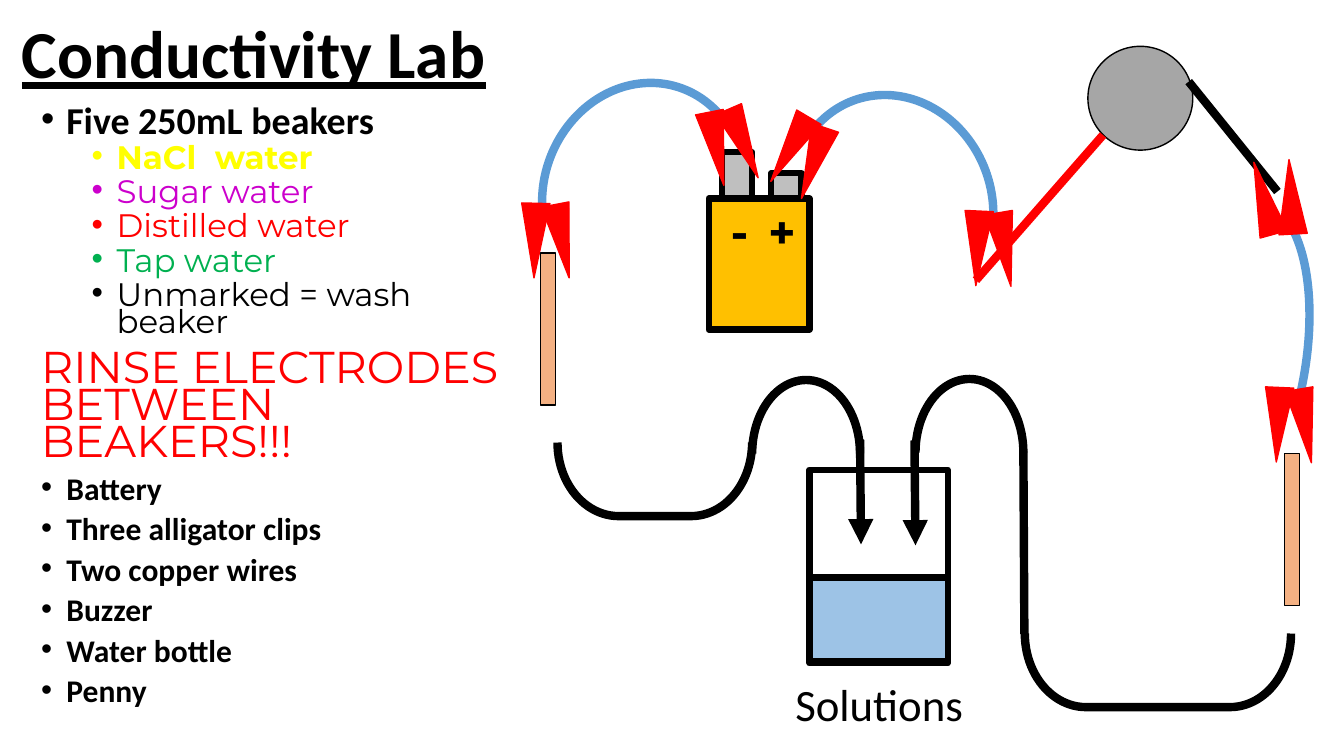
from dataclasses import dataclass
from math import cos, radians, sin

from lxml.etree import SubElement
from pptx import Presentation
from pptx.dml.color import RGBColor
from pptx.enum.shapes import MSO_CONNECTOR as Link, MSO_SHAPE as Kind
from pptx.enum.text import MSO_ANCHOR as Anchor, PP_ALIGN as Align
from pptx.oxml.ns import qn
from pptx.util import Inches, Pt


@dataclass(frozen=True)
class Theme:
    sans: str = "Calibri"
    wide: str = "Montserrat"
    black: str = "000000"
    white: str = "FFFFFF"
    red: str = "FF0000"
    yellow: str = "FFFF00"
    purple: str = "CC00CC"
    green: str = "00B050"
    blue: str = "5B9BD5"
    water: str = "9DC3E6"
    metal: str = "BFBFBF"
    grey: str = "A6A6A6"
    gold: str = "FFC000"
    copper: str = "F4B183"
    title: float = 48
    label: float = 32
    sign: float = 33
    gap: float = 20
    head: float = 27.1
    sub: float = 23.2
    alert: float = 31.8
    item: float = 22.5
    thin: float = 1
    edge: float = 4.5
    wire: float = 6


T = Theme()


def style(run, size, color, font=T.sans, bold=False):
    run.font.size = Pt(size)
    run.font.name = font
    run.font.bold = bold
    run.font.color.rgb = RGBColor.from_string(color)


def add_text(slide, box, anchor=Anchor.TOP):
    frame = slide.shapes.add_textbox(*map(Inches, box)).text_frame
    frame.word_wrap = True
    frame.vertical_anchor = anchor
    return frame


def set_bullet(para, margin):
    props = para._p.get_or_add_pPr()
    props.set("marL", str(Inches(margin)))
    props.set("indent", str(Inches(-0.25)))
    SubElement(props, qn("a:buFont")).set("typeface", "Arial")
    SubElement(props, qn("a:buChar")).set("char", "•")


def add_part(slide, kind, box, fill, line=T.black, width=T.thin, turn=0, adjust=()):
    part = slide.shapes.add_shape(kind, *map(Inches, box))
    part.shadow.inherit = False
    part.rotation = turn
    for index, value in enumerate(adjust):
        part.adjustments[index] = value
    if fill:
        part.fill.solid()
        part.fill.fore_color.rgb = RGBColor.from_string(fill)
    else:
        part.fill.background()
    part.line.color.rgb = RGBColor.from_string(line)
    part.line.width = Pt(width)
    return part


def add_arc(slide, box, turn, adjust, flip=False):
    arc = add_part(slide, Kind.ARC, box, None, T.blue, T.wire, turn, adjust)
    if flip:
        arc._element.spPr.xfrm.set("flipH", "1")


def add_bend(slide, box, turn):
    add_part(slide, Kind.LEFT_BRACKET, box, None, T.black, T.wire, turn, (0.83,))


def add_wire(slide, start, end, color=T.black, arrow=False):
    wire = slide.shapes.add_connector(Link.STRAIGHT, *map(Inches, start + end))
    wire.line.color.rgb = RGBColor.from_string(color)
    wire.line.width = Pt(T.wire)
    if arrow:
        SubElement(wire.line._get_or_add_ln(), qn("a:tailEnd")).set("type", "triangle")
    SubElement(wire._element.spPr, qn("a:effectLst"))


def add_clip(slide, x, y, turn):
    """Two jaws set apart along the clip's own axis, 12.2 degrees from each other."""
    width, height, reach = 0.28, 0.74, 0.135
    for side, angle in ((-1, turn - 12.2), (1, turn)):
        left = x + side * reach * cos(radians(turn)) - width / 2
        top = y + side * reach * sin(radians(turn)) - height / 2
        add_part(slide, Kind.ISOSCELES_TRIANGLE, (left, top, width, height),
                 T.red, T.red, turn=angle)


def add_title(slide):
    para = add_text(slide, (0.12, -0.16, 11.5, 1.45), Anchor.MIDDLE).paragraphs[0]
    para.text = "Conductivity Lab"
    para.line_spacing = 0.9
    style(para.runs[0], T.title, T.black, bold=True)
    para.runs[0].font.underline = True


def add_list(slide):
    # Words, level, size, colour, font, bold
    rows = [("Five 250mL beakers", 0, T.head, T.black, T.sans, True),
            ("NaCl  water", 1, T.sub, T.yellow, T.wide, True)]
    rows += [(words, 1, T.sub, color, T.wide, False) for words, color in (
        ("Sugar water", T.purple), ("Distilled water", T.red),
        ("Tap water", T.green), ("Unmarked = wash beaker", T.black))]
    rows.append(("RINSE ELECTRODES BETWEEN BEAKERS!!!", None, T.alert, T.red, T.wide, False))
    rows += [(words, 0, T.item, T.black, T.sans, True) for words in (
        "Battery", "Three alligator clips", "Two copper wires",
        "Buzzer", "Water bottle", "Penny")]

    frame = add_text(slide, (0.31, 1.03, 4.8, 6.47))
    frame.text = "\n".join(row[0] for row in rows)
    for para, (_, level, size, color, font, bold) in zip(frame.paragraphs, rows):
        para.level = level or 0
        para.line_spacing = 0.7
        para.space_before = Pt(5 if level else 10)
        if level is not None:
            set_bullet(para, 0.25 + 0.5 * level)
        style(para.runs[0], size, color, font, bold)


def add_beaker(slide):
    for top, height, fill in ((4.66, 1.92, T.white), (5.73, 0.83, T.water)):
        add_part(slide, Kind.RECTANGLE, (8.03, top, 1.37, height), fill, width=T.edge)
    para = add_text(slide, (6.96, 6.68, 3.52, 0.61), Anchor.MIDDLE).paragraphs[0]
    para.text = "Solutions"
    para.alignment = Align.CENTER
    style(para.runs[0], T.label, T.black)


def add_battery(slide):
    for left, top, height in ((7.16, 1.51, 0.92), (7.65, 1.72, 0.9)):
        add_part(slide, Kind.RECTANGLE, (left, top, 0.3, height), T.metal, width=T.edge)
    case = add_part(slide, Kind.RECTANGLE, (7.03, 1.97, 1, 1.3), T.gold, width=T.edge)
    frame = case.text_frame
    frame.word_wrap = True
    frame.vertical_anchor = Anchor.TOP
    frame.margin_left, frame.margin_right = Inches(0.08), 0
    para = frame.paragraphs[0]
    para.alignment = Align.CENTER
    for mark, size in (("-", T.sign), (" ", T.gap), ("+", T.sign)):
        run = para.add_run()
        run.text = mark
        style(run, size, T.black, T.wide, True)
    # Widen the gap between the two signs
    para.runs[1]._r.get_or_add_rPr().set("spc", "850")


def main():
    deck = Presentation()
    deck.slide_width, deck.slide_height = Inches(13.33), Inches(7.5)
    slide = deck.slides.add_slide(deck.slide_layouts[6])

    # Words on the left
    add_title(slide)
    add_list(slide)

    # Beaker and battery
    add_beaker(slide)
    add_battery(slide)

    # Clip leads on the battery
    sweep = (142.356, 19.022)
    add_arc(slide, (5.27, 0.93, 2.23, 1.99), 288.7, sweep)
    add_arc(slide, (7.73, 1.05, 2.23, 1.99), 71.3, sweep, flip=True)
    for clip in ((7.24, 1.45, 168.9), (7.95, 1.55, 210.7),
                 (5.44, 2.39, 181.4), (9.83, 2.47, 182.6)):
        add_clip(slide, *clip)

    # Copper strips
    for left, top in ((5.36, 2.51), (12.74, 4.5)):
        add_part(slide, Kind.RECTANGLE, (left, top, 0.15, 1.51), T.copper)

    # Buzzer and its two legs
    add_part(slide, Kind.OVAL, (10.79, 0.46, 1.04, 1.03), T.grey)
    add_wire(slide, (10.94, 1.34), (9.68, 2.78), T.red)
    add_wire(slide, (11.79, 0.81), (12.67, 1.9))

    # Wires into the beaker
    for left, top, height, turn in ((6.13, 3.79, 1.93, 270), (7.63, 3.6, 1.07, 90),
                                    (11.12, 5.33, 2.64, 270), (9.25, 3.59, 1.07, 90)):
        add_bend(slide, (left, top, 0.73, height), turn)
    add_wire(slide, (8.53, 4.36), (8.54, 5.4), arrow=True)
    add_wire(slide, (9.07, 4.37), (9.08, 5.41), arrow=True)
    add_wire(slide, (10.15, 4.48), (10.16, 6.29))

    # Clip lead from the buzzer
    add_arc(slide, (11.34, 1.94, 1.59, 3.46), 11.6, (168.558, 4.084))
    add_clip(slide, 12.67, 1.96, 356.8)
    add_clip(slide, 12.81, 4.22, 182.6)

    deck.save("out.pptx")


if __name__ == "__main__":
    main()
